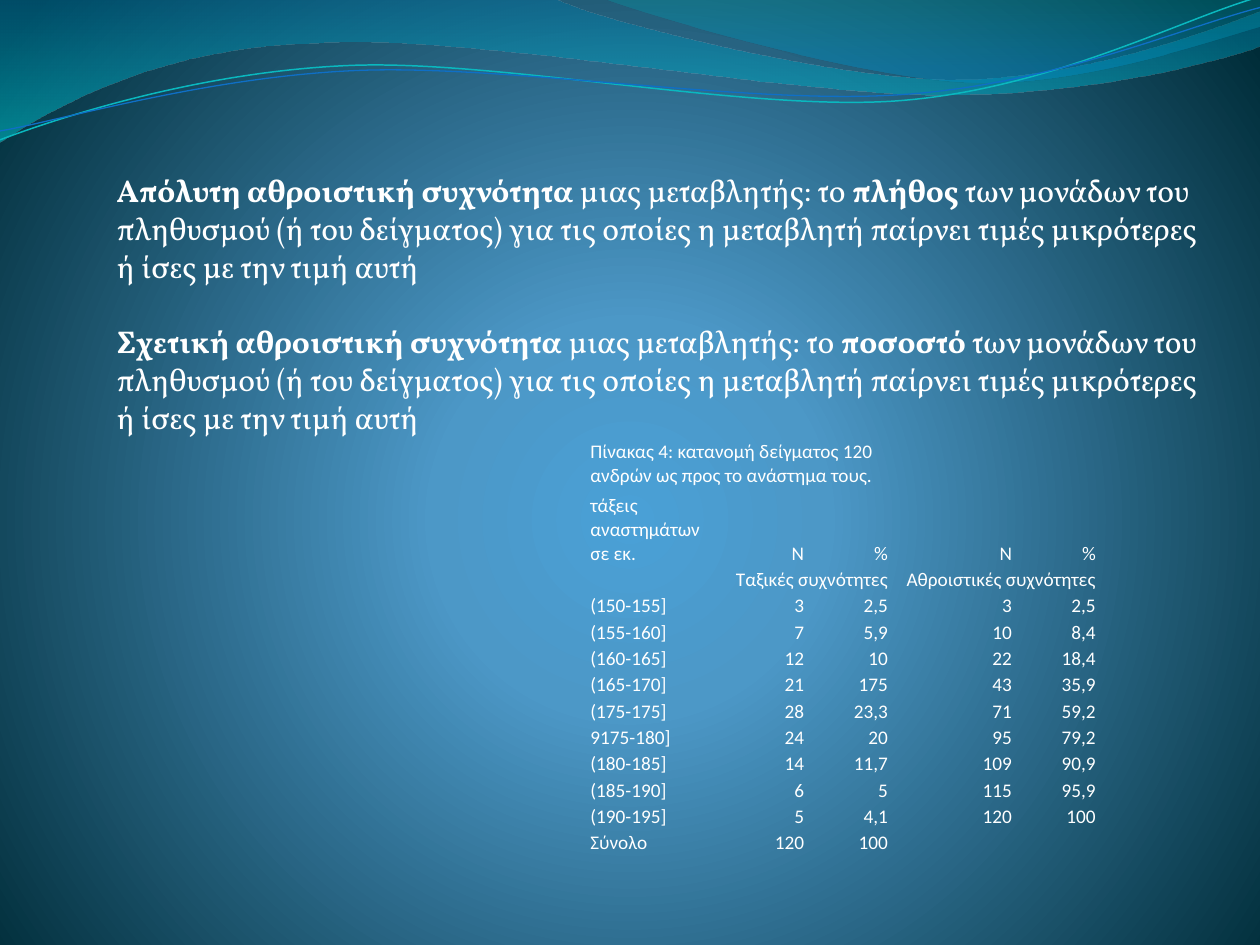
import math

from lxml import etree
from pptx import Presentation
from pptx import util as u
from pptx.dml.color import RGBColor
from pptx.enum import text
from pptx.oxml import ns

CELL = u.Inches(0.1)


def color(code):
    """Turn a hex string into a colour."""
    return RGBColor.from_string(code)


def turn(point, pivot, degrees):
    """Turn a point clockwise around a pivot."""
    angle = math.radians(degrees)
    dx, dy = point[0] - pivot[0], point[1] - pivot[1]
    return (pivot[0] + dx * math.cos(angle) - dy * math.sin(angle),
            pivot[1] + dx * math.sin(angle) + dy * math.cos(angle))


class Painter:
    """Hold the style and the current slide, a grid of 100 columns by 75 rows."""

    ink = "FFFFFF"
    body_font, body_size = "Vollkorn", 18
    table_font, table_size = "Calibri", 11
    plain_table = "{2D5ABB26-0587-4C30-8999-92F81FD0307C}"
    tilt = 2.7

    def __init__(self, deck):
        """Add a blank page to the deck."""
        self.page = deck.slides.add_slide(deck.slide_layouts[6])

    def gradient(self, fill, owner, stops, circle=None):
        """Fill with (position, colour, opacity) stops, downward or circular."""
        fill.gradient()
        node = next(owner.iter(ns.qn("a:gradFill")))
        for child in list(node):
            node.remove(child)
        stop_list = etree.SubElement(node, ns.qn("a:gsLst"))
        for position, code, opacity in stops:
            stop = etree.SubElement(stop_list, ns.qn("a:gs"), pos=str(position * 1000))
            tint = etree.SubElement(stop, ns.qn("a:srgbClr"), val=code)
            if opacity < 100:
                etree.SubElement(tint, ns.qn("a:alpha"), val=str(opacity * 1000))
        if circle:
            path = etree.SubElement(node, ns.qn("a:path"), path="circle")
            sides = {side: str(share * 1000) for side, share in zip("ltrb", circle)}
            etree.SubElement(path, ns.qn("a:fillToRect"), **sides)
        else:
            etree.SubElement(node, ns.qn("a:lin"), ang="5400000", scaled="1")

    def background(self, stops, circle):
        """Paint the page background."""
        self.gradient(self.page.background.fill, self.page.element, stops, circle)

    def outline(self, start, parts, closed):
        """Build a freeform from parts of one point (line) or three (cubic curve)."""
        parts = [[(round(x * CELL), round(y * CELL)) for x, y in part] for part in parts]
        builder = self.page.shapes.build_freeform(*(round(n * CELL) for n in start))
        builder.add_line_segments([part[-1] for part in parts], close=closed)
        shape = builder.convert_to_shape()
        shape.shadow.inherit = False
        for line, part in zip(list(shape.element.iter(ns.qn("a:lnTo"))), parts):
            if len(part) == 3:
                curve = etree.Element(ns.qn("a:cubicBezTo"))
                for x, y in part:
                    etree.SubElement(curve, ns.qn("a:pt"),
                                     x=str(x - shape.left), y=str(y - shape.top))
                line.getparent().replace(line, curve)
        return shape

    def wave(self, start, parts, stops):
        """Draw a filled wave without an edge."""
        shape = self.outline(start, parts, True)
        self.gradient(shape.fill, shape.element, stops)
        shape.line.fill.background()

    def strand(self, start, parts, pivot, code, width):
        """Draw a thin curved line, tilted around its pivot."""
        level = [[turn(point, pivot, self.tilt) for point in part] for part in parts]
        shape = self.outline(turn(start, pivot, self.tilt), level, False)
        shape.rotation = 360 - self.tilt
        shape.fill.background()
        shape.line.color.rgb = color(code)
        shape.line.width = u.Pt(width)

    def span(self, para, words, font, size, bold=False):
        """Add one run to a paragraph."""
        span = para.add_run()
        span.text = words
        span.font.name, span.font.size, span.font.bold = font, u.Pt(size), bold
        span.font.color.rgb = color(self.ink)

    def definitions(self, left, top, width, height, paragraphs, gap):
        """Write paragraphs whose runs alternate bold and regular."""
        box = self.page.shapes.add_textbox(*(round(n * CELL) for n in (left, top, width, height)))
        frame = box.text_frame
        frame.word_wrap = True
        frame.auto_size = text.MSO_AUTO_SIZE.SHAPE_TO_FIT_TEXT
        for index, words in enumerate(paragraphs):
            para = frame.add_paragraph() if index else frame.paragraphs[0]
            if index:
                para.space_before = u.Pt(gap)
            for order, part in enumerate(words):
                self.span(para, part, self.body_font, self.body_size, order % 2 == 0)

    def table(self, left, top, columns, heights, rows, merges):
        """Draw an unruled table with right-aligned figures."""
        sizes = (left, top, sum(columns), sum(heights))
        frame = self.page.shapes.add_table(len(rows), len(columns), *(round(n * CELL) for n in sizes))
        table = frame.table
        table.first_row = table.horz_banding = False
        next(frame.element.iter(ns.qn("a:tableStyleId"))).text = self.plain_table
        for column, width in zip(table.columns, columns):
            column.width = round(width * CELL)
        for row, height, words in zip(table.rows, heights, rows):
            row.height = round(height * CELL)
            for index, cell in enumerate(row.cells):
                self.cell(cell, words[index], index > 0)
        for row, first, last in merges:
            table.cell(row, first).merge(table.cell(row, last))

    def cell(self, cell, words, figure):
        """Fill one table cell."""
        cell.fill.background()
        cell.margin_left = cell.margin_right = cell.margin_top = cell.margin_bottom = 0
        cell.vertical_anchor = text.MSO_ANCHOR.BOTTOM
        para = cell.text_frame.paragraphs[0]
        para.alignment = text.PP_ALIGN.RIGHT if figure else text.PP_ALIGN.LEFT
        if words:
            self.span(para, words, self.table_font, self.table_size)
        else:
            size = str(self.table_size * 100)
            etree.SubElement(para._p, ns.qn("a:endParaRPr"), sz=size)


def main():
    """Build the slide on cumulative frequency."""
    deck = Presentation()
    deck.slide_width, deck.slide_height = 100 * CELL, 75 * CELL
    painter = Painter(deck)
    painter.background([(0, "4AA0D6", 100), (25, "4C98C7", 100), (100, "002C38", 100)],
                       (10, 110, 10, 100))
    painter.wave((0, 0), [
        [(44, -0.1)], [(47.6, 1.7), (66.4, 6.3), (75.8, 6.3)],
        [(85.3, 6.3), (95.8, 2.6), (100, 0.9)], [(100.1, 3.6)],
        [(98.3, 4.4), (87, 7.6), (74.6, 7.5)], [(62.2, 7.5), (38.2, 2.8), (25.7, 3.4)],
        [(12.9, 3.6), (4.6, 8.3), (-0.1, 11.3)]], [(0, "0074A1", 45), (100, "00C6CF", 55)])
    painter.wave((47.9, -0.1), [
        [(50.9, 1.1), (68.2, 6.2), (76.9, 6.5)], [(85.6, 6.9), (96.1, 3.2), (100, 2.1)],
        [(100, 0)]], [(0, "00A1A9", 30), (80, "008BBF", 45)])
    painter.strand((0, 11.1), [
        [(4.8, 9.3), (15.8, 5.7), (27.7, 5.2)], [(39.5, 4.7), (59.3, 8.9), (71.3, 8)],
        [(83.3, 7.1), (93.8, 1.5), (99.8, -0.2)]], (49.9, 5.75), "0AB8BF", 0.85)
    painter.strand((0, 10.4), [
        [(4.7, 9.6), (16.4, 6.1), (28.3, 5.6)], [(40.3, 5.1), (59.7, 8.4), (71.7, 7.5)],
        [(83.6, 6.7), (94.1, 2.1), (100, 0.6)]], (50, 5.9), "0F6FC6", 0.75)

    ending = (" των μονάδων του πληθυσμού (ή του δείγματος) για τις οποίες η μεταβλητή "
              "παίρνει τιμές μικρότερες ή ίσες με την τιμή αυτή")
    terms = [("Απόλυτη", "πλήθος"), ("Σχετική", "ποσοστό")]
    painter.definitions(8.27, 13.1, 89, 25.2, [
        (f"{kind} αθροιστική συχνότητα ", "μιας μεταβλητής: το ", measure, ending)
        for kind, measure in terms], gap=21.6)

    classes = [
        ("(150-155]", "3", "2,5", "3", "2,5"),
        ("(155-160]", "7", "5,9", "10", "8,4"),
        ("(160-165]", "12", "10", "22", "18,4"),
        ("(165-170]", "21", "175", "43", "35,9"),
        ("(175-175]", "28", "23,3", "71", "59,2"),
        ("9175-180]", "24", "20", "95", "79,2"),
        ("(180-185]", "14", "11,7", "109", "90,9"),
        ("(185-190]", "6", "5", "115", "95,9"),
        ("(190-195]", "5", "4,1", "120", "100"),
        ("Σύνολο", "120", "100", "", ""),
    ]
    rows = [
        ("Πίνακας 4: κατανομή δείγματος 120 ανδρών ως προς το ανάστημα τους.", "", "", "", ""),
        ("τάξεις αναστημάτων σε εκ.", "Ν", "%", "Ν", "%"),
        ("", "Ταξικές συχνότητες", "", "Αθροιστικές συχνότητες", ""),
        *classes,
    ]
    painter.table(46.85, 33.6, [10.3, 6.67, 6.65, 9.85, 6.65], [5.1, 6.2] + [2.09] * 11,
                  rows, merges=[(0, 0, 2), (2, 1, 2), (2, 3, 4)])
    deck.save("out.pptx")


if __name__ == "__main__":
    main()
